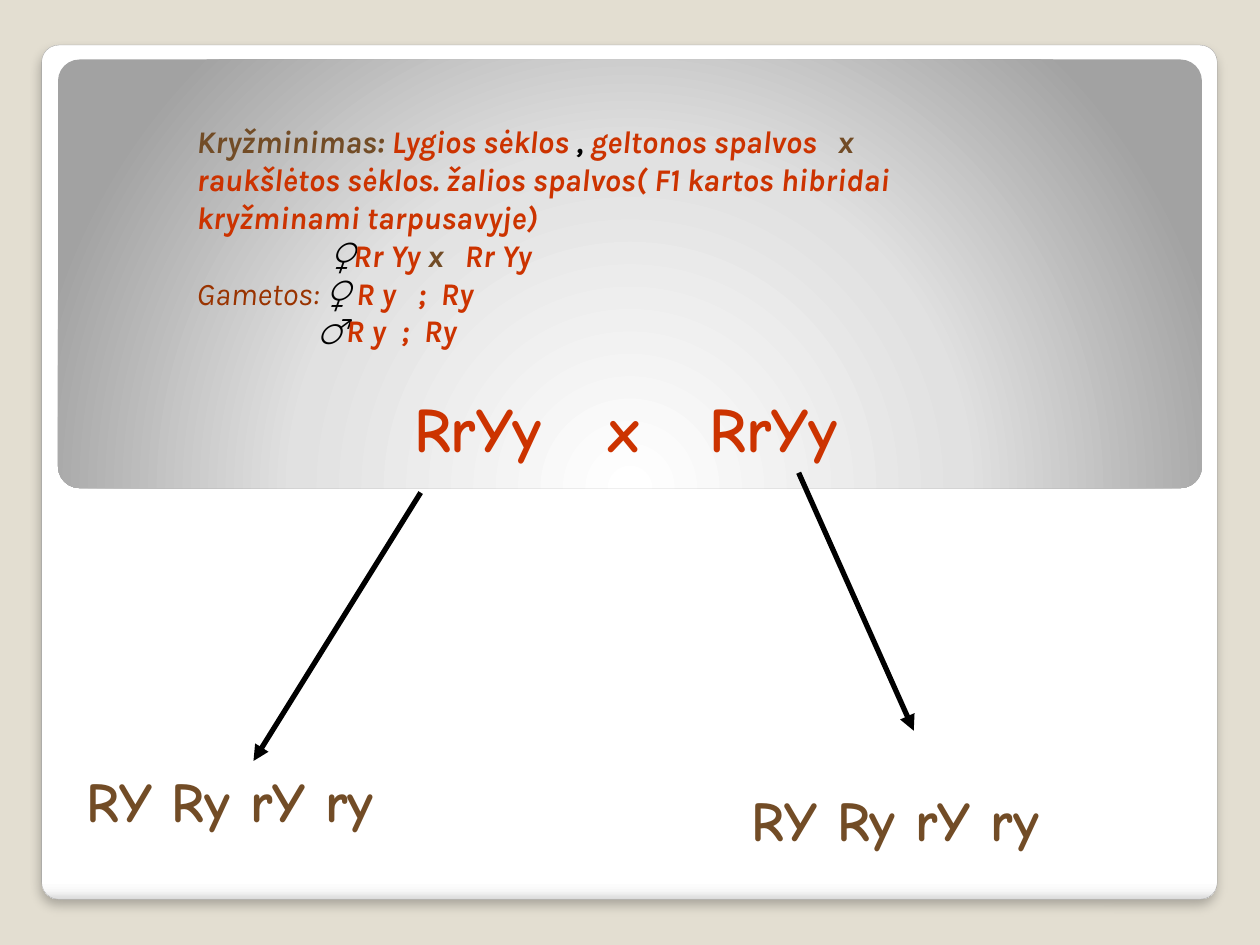
from lxml import etree
from pptx import Presentation
from pptx import util as u
from pptx.dml.color import RGBColor
from pptx.enum import shapes, text
from pptx.oxml import ns

COLORS = {
    "background": "E3DED1", "card_line": "A4A4A4", "white": "FFFFFF",
    "brown": "724C26", "red": "CC3300", "rust": "993300", "black": "000000",
}

# Content: each paragraph is a list of (text, colour, bold) runs plus tab stops in cm
CROSSING = [
    ([("Kryžminimas: ", "brown", True), ("Lygios sėklos ", "red", True),
      (", ", "black", True), ("geltonos spalvos\t", "red", True), ("x ", "brown", True),
      ("raukšlėtos sėklos. žalios spalvos( F1 kartos hibridai kryžminami tarpusavyje)",
       "red", True)], [12.92]),
    ([("\t♀", "black", True), ("Rr Yy ", "red", True), ("x\t", "brown", True),
      ("Rr Yy", "red", True)], [2.7, 5.4]),
    ([("Gametos: ", "rust", False), ("♀ ", "black", True),
      ("R y\t;\tRy", "red", True)], [4.45, 4.92]),
    ([("\t♂", "black", True), ("R y\t;\tRy", "red", True)], [2.45, 4.11, 4.58]),
]
PARENTS = [([("RrYy\tx\tRrYy", "red", True)], [3.91, 5.96])]
GAMETES = [([("RY Ry rY ry", "brown", True)], [])]
GAMETE_PLACES = [(1.5, 15.32), (14.91, 15.72)]
ARROWS = [((8.48, 9.93), (5.11, 15.34)), ((16.1, 9.53), (18.42, 14.73))]

# Gradients: stops in percent, then the direction element
CARD_STOPS = [(0, "FFFFFF"), (98, "FFFFFF"), (99, "F7F7F7"), (100, "DADADA")]
PANEL_STOPS = [(0, "FFFFFF"), (55, "E1E1E1"), (100, "A2A2A2")]


def color(name):
    return RGBColor.from_string(COLORS[name])


def add_child(parent, tag, **attributes):
    values = {key: str(value) for key, value in attributes.items()}
    return etree.SubElement(parent, ns.qn(tag), values)


def write_text(shape, paragraphs, font, size, italic=False):
    frame = shape.text_frame
    frame.word_wrap = True
    frame.auto_size = text.MSO_AUTO_SIZE.NONE
    frame.vertical_anchor = text.MSO_ANCHOR.TOP
    for index, (runs, stops) in enumerate(paragraphs):
        paragraph = frame.add_paragraph() if index else frame.paragraphs[0]
        paragraph.alignment = text.PP_ALIGN.LEFT
        if stops:
            tabs = add_child(paragraph._p.get_or_add_pPr(), "a:tabLst")
            for stop in stops:
                add_child(tabs, "a:tab", pos=int(u.Cm(stop)), algn="l")
        for words, name, bold in runs:
            run = paragraph.add_run()
            run.text = words
            run.font.name, run.font.size = font, u.Pt(size)
            run.font.bold, run.font.italic = bold, italic
            run.font.color.rgb = color(name)


def add_rounded(slide, box, radius, stops):
    shape = slide.shapes.add_shape(
        shapes.MSO_SHAPE.ROUNDED_RECTANGLE, *(u.Cm(value) for value in box))
    shape.adjustments[0] = radius
    shape.shadow.inherit = False
    shape.line.fill.background()
    gradient = etree.Element(ns.qn("a:gradFill"), rotWithShape="1")
    stop_list = add_child(gradient, "a:gsLst")
    for position, value in stops:
        stop = add_child(stop_list, "a:gs", pos=position * 1000)
        add_child(stop, "a:srgbClr", val=value)
    shape.element.spPr.find(ns.qn("a:prstGeom")).addnext(gradient)
    return shape, gradient


def add_arrow(slide, start, end):
    points = (u.Cm(value) for value in (*start, *end))
    arrow = slide.shapes.add_connector(shapes.MSO_CONNECTOR.STRAIGHT, *points)
    arrow.line.color.rgb = color("black")
    arrow.line.width = u.Pt(3)
    add_child(arrow.line._get_or_add_ln(), "a:tailEnd", type="triangle")
    add_child(arrow.element.spPr, "a:effectLst")


def main():
    presentation = Presentation()
    presentation.slide_width, presentation.slide_height = u.Cm(25.4), u.Cm(19.05)
    slide = presentation.slides.add_slide(presentation.slide_layouts[5])
    slide.background.fill.solid()
    slide.background.fill.fore_color.rgb = color("background")

    # White card with a soft shadow
    card, gradient = add_rounded(slide, (0.84, 0.91, 23.7, 17.22), 0.02, CARD_STOPS)
    add_child(gradient, "a:lin", ang=90 * 60000, scaled=0)
    card.line.color.rgb = color("card_line")
    card.line.width = u.Pt(0.16)
    effects = card.element.spPr.find(ns.qn("a:effectLst"))
    shadow = add_child(effects, "a:outerShdw", blurRad=int(u.Pt(6)), dist=int(u.Pt(4)),
                       dir=90 * 60000, algn="t", rotWithShape=0)
    add_child(add_child(shadow, "a:srgbClr", val=COLORS["black"]), "a:alpha", val=25000)

    # Grey panel, lit from below
    panel, gradient = add_rounded(slide, (1.17, 1.2, 23.06, 8.64), 0.05, PANEL_STOPS)
    direction = add_child(gradient, "a:path", path="circle")
    add_child(direction, "a:fillToRect", l=50000, t=175000, r=50000, b=-75000)

    # Crossing description, raised above the panel
    title = slide.shapes.title
    title.left, title.top, title.width, title.height = (
        u.Cm(value) for value in (3.71, 2.34, 16.4, 4.88))
    write_text(title, CROSSING, font="Karla", size=18, italic=True)
    slide.shapes.element.append(title.element)

    # Gametes of each parent
    for left, top in GAMETE_PLACES:
        box = slide.shapes.add_textbox(u.Cm(left), u.Cm(top), u.Cm(9.1), u.Cm(1.6))
        box.fill.solid()
        box.fill.fore_color.rgb = color("white")
        write_text(box, GAMETES, font="Comic Neue", size=32)

    # Arrows from parents to gametes
    for start, end in ARROWS:
        add_arrow(slide, start, end)

    # Parent genotypes
    parents = slide.shapes.add_textbox(u.Cm(8.1), u.Cm(7.72), u.Cm(13.97), u.Cm(1.78))
    write_text(parents, PARENTS, font="Comic Neue", size=36)

    presentation.save("out.pptx")


if __name__ == "__main__":
    main()
